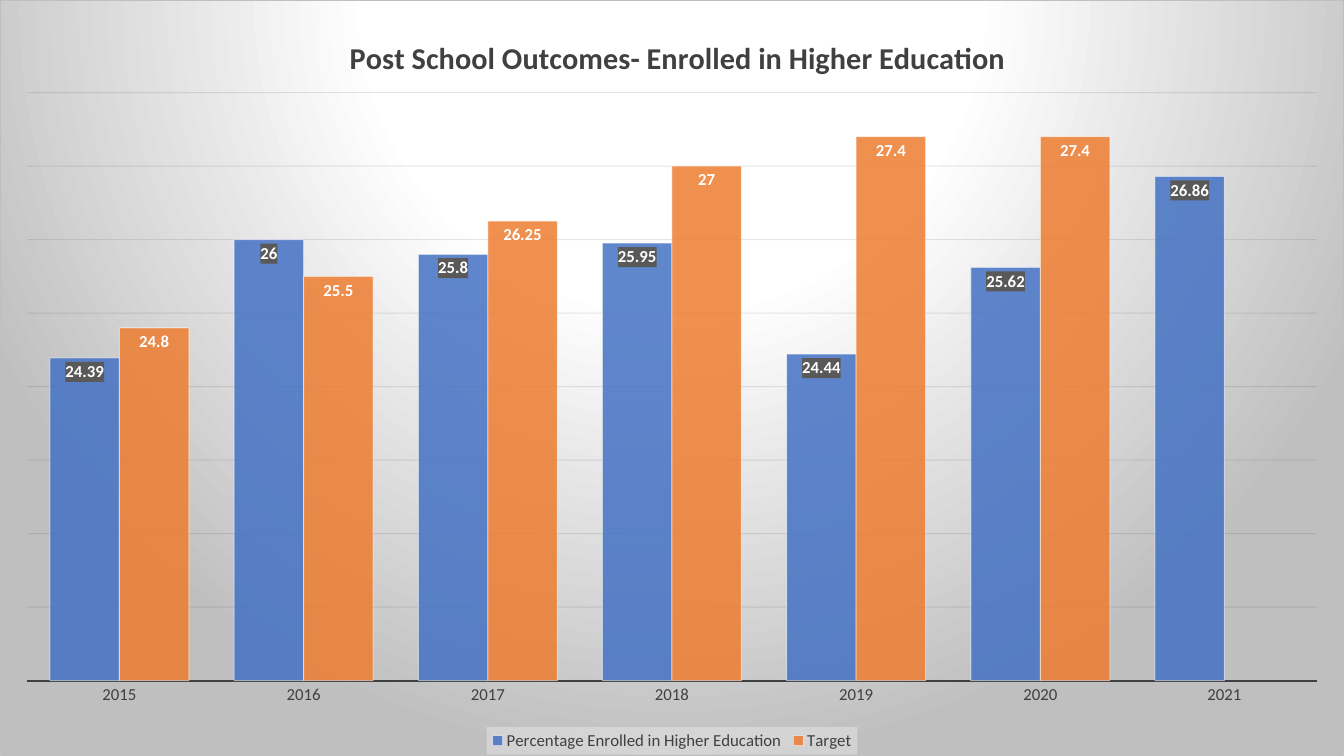
import pptx
import pptx.chart.data
import pptx.dml.color
import pptx.enum.chart
import pptx.oxml
import pptx.oxml.ns
import pptx.util

RGBColor = pptx.dml.color.RGBColor
Pt = pptx.util.Pt
WHITE = RGBColor(0xFF, 0xFF, 0xFF)
SILVER = RGBColor(0xBF, 0xBF, 0xBF)
LEGEND_GRAY = RGBColor(0xF2, 0xF2, 0xF2)
LABEL_GRAY = RGBColor(0x59, 0x59, 0x59)
TEXT_GRAY = RGBColor(0x40, 0x40, 0x40)
GRID_BLACK = RGBColor(0x0D, 0x0D, 0x0D)
BLUE = RGBColor(0x44, 0x72, 0xC4)
ORANGE = RGBColor(0xED, 0x7D, 0x31)
FONT = "Calibri"

TITLE = "Post School Outcomes- Enrolled in Higher Education"
YEARS = [str(year) for year in range(2015, 2022)]
# Name, values, bar colour, box colour behind the labels
MEASURES = [
    ("Percentage Enrolled in Higher Education",
     (24.39, 26, 25.8, 25.95, 24.44, 25.62, 26.86), BLUE, LABEL_GRAY),
    ("Target", (24.8, 25.5, 26.25, 27, 27.4, 27.4, None), ORANGE, None),
]


def style_font(font, size, color, bold=False):
    font.name, font.size, font.bold = FONT, Pt(size), bold
    font.color.rgb = color


def chart_xml(tag, body):
    return pptx.oxml.parse_xml(
        f'<c:{tag} {pptx.oxml.ns.nsdecls("c", "a")}>{body}</c:{tag}>')


def solid_fill(color, percent=100):
    return (f'<a:solidFill><a:srgbClr val="{color}"><a:alpha val="{percent * 1000}"/>'
            '</a:srgbClr></a:solidFill>')


def set_opacity(chart, place, percent):
    for color in chart.element.xpath(f".//{place}/a:solidFill/a:srgbClr"):
        color.append(pptx.oxml.parse_xml(
            f'<a:alpha {pptx.oxml.ns.nsdecls("a")} val="{percent * 1000}"/>'))


def set_layout(part, before, inner=False, **shares):
    """Place a chart part by shares of the chart's size."""
    for automatic in part.xpath("c:layout"):
        part.remove(automatic)
    body = '<c:layoutTarget val="inner"/>' if inner else ""
    body += "".join(f'<c:{side}Mode val="edge"/>' for side in "xy")
    body += "".join(f'<c:{side} val="{share}"/>' for side, share in shares.items())
    layout = chart_xml("layout", f"<c:manualLayout>{body}</c:manualLayout>")
    if before:
        part.xpath(before)[0].addnext(layout)
    else:
        part.insert(0, layout)


def style_backdrop(chart):
    stops = "".join(f'<a:gs pos="{pos * 1000}"><a:srgbClr val="{color}"/></a:gs>'
                    for pos, color in ((0, WHITE), (39, WHITE), (100, SILVER)))
    backdrop = chart_xml("spPr", (
        f'<a:gradFill><a:gsLst>{stops}</a:gsLst><a:path path="circle">'
        '<a:fillToRect l="50000" t="-80000" r="50000" b="180000"/></a:path></a:gradFill>'
        f'<a:ln w="{Pt(0.75)}">{solid_fill(SILVER)}</a:ln>'))
    chart.element.xpath("c:txPr")[0].addprevious(backdrop)


def style_title(chart):
    heading = chart.chart_title.text_frame
    heading.text = TITLE
    style_font(heading.paragraphs[0].runs[0].font, 21.6, TEXT_GRAY, True)
    set_layout(chart.element.xpath(".//c:chart/c:title")[0], "c:tx", x=0.256, y=0.04)


def style_axes(chart):
    years = chart.category_axis
    years.major_tick_mark = pptx.enum.chart.XL_TICK_MARK.NONE
    years.format.line.color.rgb = TEXT_GRAY
    years.format.line.width = Pt(1.5)
    style_font(years.tick_labels.font, 12, TEXT_GRAY)

    percentages = chart.value_axis
    percentages.minimum_scale, percentages.maximum_scale = 20, 28
    percentages.major_unit = 1
    percentages.visible = False
    grid = percentages.major_gridlines.format.line
    grid.color.rgb = GRID_BLACK
    grid.width = Pt(0.75)
    set_opacity(chart, "c:majorGridlines/c:spPr/a:ln", 10)


def style_bars(chart):
    bars = chart.plots[0]
    bars.gap_width, bars.overlap, bars.vary_by_categories = 65, 0, False
    for measure, (_, _, color, label_box) in zip(bars.series, MEASURES):
        measure.invert_if_negative = False
        measure.format.fill.solid()
        measure.format.fill.fore_color.rgb = color
        measure.format.line.color.rgb = WHITE
        measure.format.line.width = Pt(0.75)
        labels = measure.data_labels
        labels.show_value = True
        labels.position = pptx.enum.chart.XL_LABEL_POSITION.INSIDE_END
        style_font(labels.font, 12, WHITE, True)
        if label_box:
            text = chart.element.xpath(".//c:ser/c:dLbls/c:txPr")[-1]
            text.addprevious(chart_xml("spPr", solid_fill(label_box)))
    set_opacity(chart, "c:ser/c:spPr", 85)
    set_opacity(chart, "c:ser/c:spPr/a:ln", 50)


def style_legend(chart):
    chart.has_legend = True
    legend = chart.legend
    legend.position = pptx.enum.chart.XL_LEGEND_POSITION.BOTTOM
    legend.include_in_layout = False
    style_font(legend.font, 12, TEXT_GRAY)
    part = chart.element.xpath(".//c:legend")[0]
    set_layout(part, "c:legendPos", x=0.362, y=0.962, w=0.276, h=0.037)
    part.xpath("c:txPr")[0].addprevious(chart_xml("spPr", solid_fill(LEGEND_GRAY, 39)))


def add_outcomes_chart(slide, left, top, width, height):
    outcomes = pptx.chart.data.CategoryChartData()
    outcomes.categories = YEARS
    for name, values, _, _ in MEASURES:
        outcomes.add_series(name, values)
    chart = slide.shapes.add_chart(
        pptx.enum.chart.XL_CHART_TYPE.COLUMN_CLUSTERED,
        left, top, width, height, outcomes).chart
    style_font(chart.font, 10, RGBColor(0, 0, 0))
    style_backdrop(chart)
    style_title(chart)
    style_axes(chart)
    style_bars(chart)
    style_legend(chart)
    set_layout(chart.element.xpath(".//c:plotArea")[0], None, inner=True,
               x=0.02, y=0.122, w=0.96, h=0.779)


def main():
    deck = pptx.Presentation()
    deck.slide_width = pptx.util.Inches(13.33)
    deck.slide_height = pptx.util.Inches(7.5)
    slide = deck.slides.add_slide(deck.slide_layouts[6])
    add_outcomes_chart(slide, 0, 0, deck.slide_width, deck.slide_height)
    deck.save("out.pptx")


if __name__ == "__main__":
    main()
